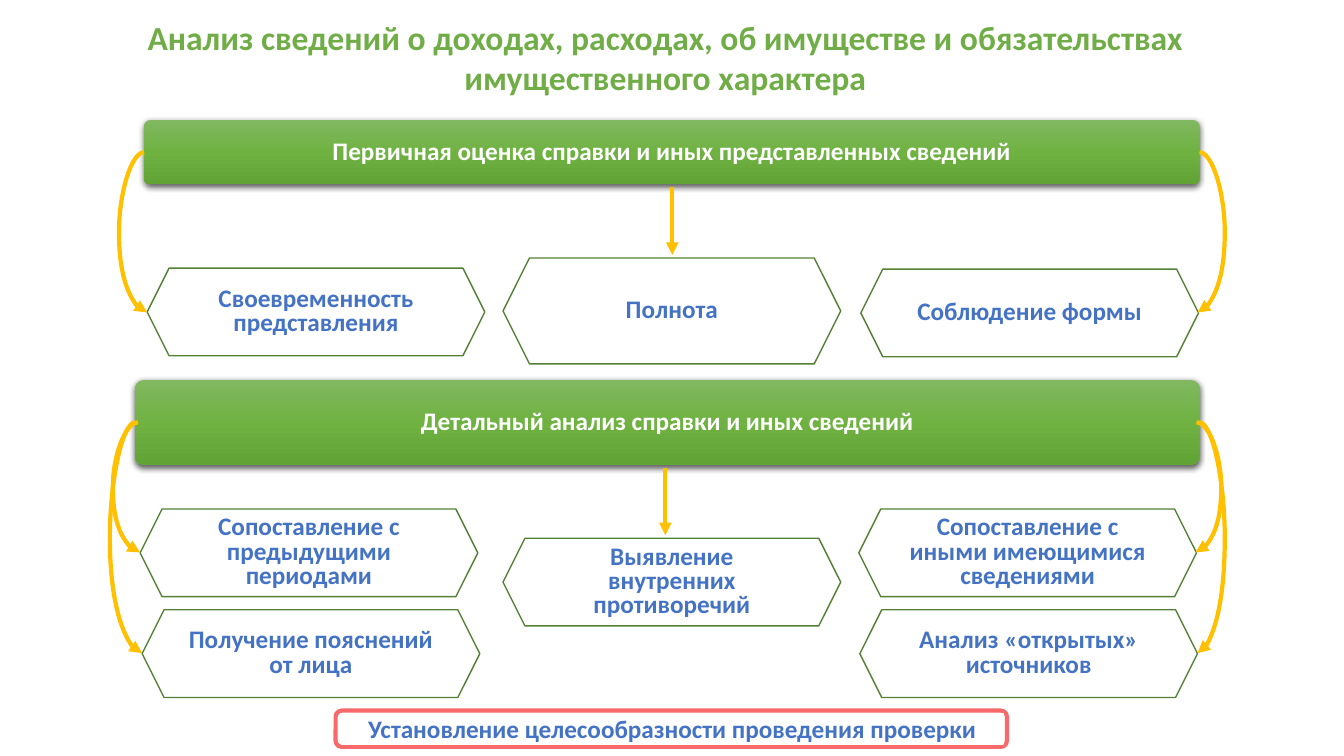
from copy import deepcopy

from lxml import etree
from pptx import Presentation
from pptx import util as u
from pptx.dml.color import RGBColor
from pptx.enum import shapes, text
from pptx.oxml.ns import qn

PX = 9144
HEX = {
    "green": "70AD47", "top": "81B861", "mid": "6FB242", "low": "62A336",
    "edge": "538035", "blue": "4472C4", "gold": "FFC000", "red": "F8696B",
    "white": "FFFFFF", "black": "000000",
}
KIND = shapes.MSO_SHAPE
LINK = shapes.MSO_CONNECTOR


def rgb(name):
    return RGBColor.from_string(HEX[name])


def write(frame, words, size=18, color="blue", space=None, pad=(10, 5),
          anchor=text.MSO_ANCHOR.MIDDLE):
    frame.word_wrap = True
    frame.vertical_anchor = anchor
    frame.margin_left = frame.margin_right = pad[0] * PX
    frame.margin_top = frame.margin_bottom = pad[1] * PX
    para = frame.paragraphs[0]
    para.alignment = text.PP_ALIGN.CENTER
    para.line_spacing = space
    run = para.add_run()
    run.text = words
    run.font.name = "Calibri"
    run.font.size = u.Pt(size)
    run.font.bold = True
    run.font.color.rgb = rgb(color)


class Board:
    """Draws the parts of one slide in the shared style, in px of 1/100 inch."""

    def __init__(self, deck):
        self.slide = deck.slides.add_slide(deck.slide_layouts[6])
        self.items = self.slide.shapes

    def title(self, box, words):
        item = self.items.add_textbox(*(n * PX for n in box))
        write(item.text_frame, words, size=24, color="green",
              anchor=text.MSO_ANCHOR.TOP)

    def shape(self, kind, box, fill=None, line=None, width=1):
        item = self.items.add_shape(kind, *(n * PX for n in box))
        item.shadow.inherit = False
        if fill:
            item.fill.solid()
            item.fill.fore_color.rgb = rgb(fill)
        else:
            item.fill.background()
        if line:
            item.line.color.rgb = rgb(line)
            item.line.width = u.Pt(width)
        else:
            item.line.fill.background()
        return item

    def bar(self, box, words):
        item = self.shape(KIND.ROUNDED_RECTANGLE, box)
        item.adjustments[0] = 0.1
        item.fill.gradient()
        item.fill.gradient_angle = 270
        props = item._element.spPr
        stops = props.find(".//" + qn("a:gsLst"))
        stops.insert(1, deepcopy(stops[0]))
        tones = zip(item.fill.gradient_stops, ("top", "mid", "low"), (0, 0.5, 1))
        for stop, tone, place in tones:
            stop.color.rgb = rgb(tone)
            stop.position = place
        shade = etree.SubElement(
            props.find(qn("a:effectLst")), qn("a:outerShdw"),
            blurRad=str(u.Pt(4.5)), dist=str(u.Pt(1.5)), dir="5400000",
            algn="ctr", rotWithShape="0")
        tint = etree.SubElement(shade, qn("a:srgbClr"), val=HEX["black"])
        etree.SubElement(tint, qn("a:alpha"), val="63000")
        write(item.text_frame, words, color="white", space=0.9)

    def cell(self, left, top, words, high=87):
        item = self.shape(KIND.HEXAGON, (left, top, 335, high), "white", "edge")
        write(item.text_frame, words, space=0.8)

    def result(self, words):
        rim = self.shape(KIND.ROUNDED_RECTANGLE, (333, 705, 666, 36),
                         line="red", width=3)
        rim.adjustments[0] = 0.167
        label = self.shape(KIND.RECTANGLE, (339, 708, 656, 30), line="white")
        write(label.text_frame, words, pad=(0, 0))

    def arrow(self, x1, y1, x2, y2, bow=0):
        kind = LINK.CURVE if bow else LINK.STRAIGHT
        link = self.items.add_connector(kind, *(n * PX for n in (x1, y1, x2, y2)))
        link.line.color.rgb = rgb("gold")
        link.line.width = u.Pt(3)
        props = link._element.spPr
        etree.SubElement(props.find(qn("a:ln")), qn("a:tailEnd"), type="triangle")
        etree.SubElement(props, qn("a:effectLst"))
        if bow:
            bend = round(bow / (x2 - x1) * 100000)
            guides = props.find(".//" + qn("a:avLst"))
            etree.SubElement(guides, qn("a:gd"), name="adj1", fmla=f"val {bend}")


def main():
    deck = Presentation()
    deck.slide_width, deck.slide_height = u.Inches(13.333), u.Inches(7.5)
    board = Board(deck)
    board.title((48, 12, 1224, 91),
                "Анализ сведений о доходах, расходах, об имуществе и "
                "обязательствах имущественного характера")

    board.bar((143, 119, 1047, 64),
              "Первичная оценка справки и иных представленных сведений")
    board.cell(499, 256, "Полнота", high=105)
    board.cell(146, 266, "Своевременность представления")
    board.cell(854, 267, "Соблюдение формы")

    board.bar((134, 377, 1056, 84), "Детальный анализ справки и иных сведений")
    for left, top, words in (
        (499, 534, "Выявление внутренних противоречий"),
        (139, 505, "Сопоставление с предыдущими периодами"),
        (852, 505, "Сопоставление с иными имеющимися сведениями"),
        (141, 605, "Получение пояснений от лица"),
        (853, 605, "Анализ «открытых» источников"),
    ):
        board.cell(left, top, words)
    board.result("Установление целесообразности проведения проверки")

    for ends in ((137, 419, 139, 548), (134, 419, 141, 648), (143, 151, 146, 310)):
        board.arrow(*ends, bow=-25)
    for ends in ((1187, 419, 1186, 548), (1190, 419, 1188, 648),
                 (1190, 151, 1188, 310)):
        board.arrow(*ends, bow=25)
    for x, y in ((667, 186), (660, 464)):
        board.arrow(x, y, x, y + 67)
    deck.save("out.pptx")


if __name__ == "__main__":
    main()
